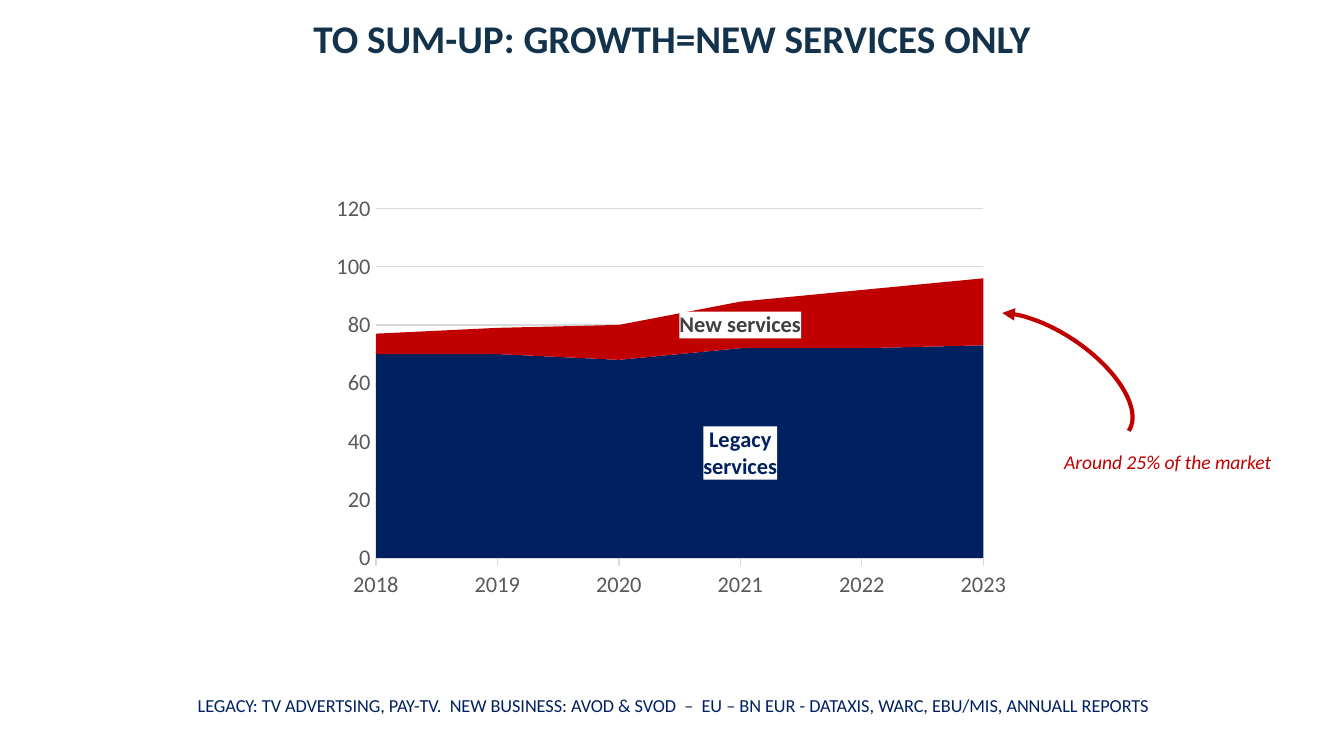
import lxml.etree
import pptx
import pptx.chart.data
import pptx.dml.color
import pptx.enum.chart
import pptx.enum.shapes
import pptx.enum.text
import pptx.oxml
import pptx.oxml.ns
import pptx.util

In, Pt, qn = pptx.util.Inches, pptx.util.Pt, pptx.oxml.ns.qn
COLORS = {"title": "13334D", "navy": "002060", "red": "C00000", "axis": "595959",
          "label": "404040", "grid": "D9D9D9", "white": "FFFFFF"}
W = 10
H = W * 9 / 16


def rgb(name):
    return pptx.dml.color.RGBColor.from_string(COLORS[name])


def style(font, size, color, bold=False, italic=False):
    font.name, font.size, font.bold, font.italic = "Calibri", Pt(size), bold, italic
    font.color.rgb = rgb(color)


prs = pptx.Presentation()
prs.slide_width, prs.slide_height = In(W), In(H)
s = prs.slides.add_slide(prs.slide_layouts[6])

# Stacked area chart
data = pptx.chart.data.CategoryChartData(number_format="0")
data.categories = [str(year) for year in range(2018, 2024)]
data.add_series("Legacy services", (70, 70, 68, 72, 72, 73))
data.add_series("New services", (7, 9, 12, 16, 20, 23))
chart = s.shapes.add_chart(pptx.enum.chart.XL_CHART_TYPE.AREA_STACKED,
                           In(0.24 * W), In(1.39), In(5.19), In(3.12), data).chart
chart.has_legend = chart.has_title = False
chart.font.name, chart.font.size = "Calibri", Pt(12)

years, values = chart.category_axis, chart.value_axis
for axis in (years, values):
    style(axis.tick_labels.font, 12, "axis")
    axis.minor_tick_mark = pptx.enum.chart.XL_TICK_MARK.NONE
years.has_major_gridlines = False
years.major_tick_mark = pptx.enum.chart.XL_TICK_MARK.OUTSIDE
values.major_tick_mark = pptx.enum.chart.XL_TICK_MARK.NONE
values.minimum_scale, values.maximum_scale, values.major_unit = 0, 120, 20
values.tick_labels.number_format = "0"
values.tick_labels.number_format_is_linked = False
values.format.line.fill.background()
for line in (years.format.line, values.major_gridlines.format.line):
    line.color.rgb, line.width = rgb("grid"), Pt(0.75)
for between in chart._chartSpace.iter(qn("c:crossBetween")):
    between.set("val", "midCat")

# Each area carries its name on a white label at 2021
for series, fill, ink in zip(chart.plots[0].series, ("navy", "red"), ("navy", "label")):
    series.format.fill.solid()
    series.format.fill.fore_color.rgb = rgb(fill)
    series.data_labels.show_value = False
    style(series.points[3].data_label.font, 12, ink, bold=True)
    label = series._element.find(".//" + qn("c:dLbl"))
    for flag, shown in (("c:showVal", "0"), ("c:showSerName", "1")):
        label.find(qn(flag)).set("val", shown)
    for old in label.findall(qn("c:spPr")):
        label.remove(old)
    label.find(qn("c:txPr")).addprevious(pptx.oxml.parse_xml(
        f'<c:spPr {pptx.oxml.ns.nsdecls("c", "a")}><a:solidFill>'
        f'<a:srgbClr val="{COLORS["white"]}"/></a:solidFill></c:spPr>'))

# Source line
source = s.shapes.add_shape(pptx.enum.shapes.MSO_SHAPE.RECTANGLE,
                            In(0.97), In(5.1), In(8.07), In(0.3))
source.shadow.inherit = False
source.fill.solid()
source.fill.fore_color.rgb = source.line.color.rgb = rgb("white")
source.line.width = Pt(0.25)
tf = source.text_frame
tf.margin_left = tf.margin_right = tf.margin_top = tf.margin_bottom = In(0.02)
tf.vertical_anchor = pptx.enum.text.MSO_ANCHOR.MIDDLE
tf.text = ("LEGACY: TV ADVERTSING, PAY-TV.  NEW BUSINESS: AVOD & SVOD  –  "
           "EU – BN EUR - DATAXIS, WARC, EBU/MIS, ANNUALL REPORTS")
tf.paragraphs[0].alignment = pptx.enum.text.PP_ALIGN.CENTER
style(tf.paragraphs[0].runs[0].font, 9.75, "navy")

# Title and remark
align = pptx.enum.text.PP_ALIGN
for box, text, size, color, bold, side in (
        ((0, 0.06, W, 0.45), "TO SUM-UP: GROWTH=NEW SERVICES ONLY", 21, "title", True, align.CENTER),
        ((7.82, 3.3, 2.1, 0.28), "Around 25% of the market", 10.5, "red", False, align.LEFT)):
    tf = s.shapes.add_textbox(*map(In, box)).text_frame
    tf.word_wrap = True
    tf.auto_size = pptx.enum.text.MSO_AUTO_SIZE.SHAPE_TO_FIT_TEXT
    tf.text = text
    p = tf.paragraphs[0]
    p.alignment = side
    style(p.runs[0].font, size, color, bold, italic=not bold)

# Curved arrow from the remark to the new services
arc = s.shapes.add_shape(pptx.enum.shapes.MSO_SHAPE.ARC, In(7.11), In(2.48), In(1.41), In(0.66))
arc.adjustments[0], arc.adjustments[1] = 119.49, 0
arc.rotation = 34.2
arc.shadow.inherit = False
arc.fill.background()
arc.line.color.rgb, arc.line.width = rgb("red"), Pt(2.25)
lxml.etree.SubElement(arc.line._get_or_add_ln(), qn("a:headEnd"), type="triangle")

prs.save("out.pptx")
